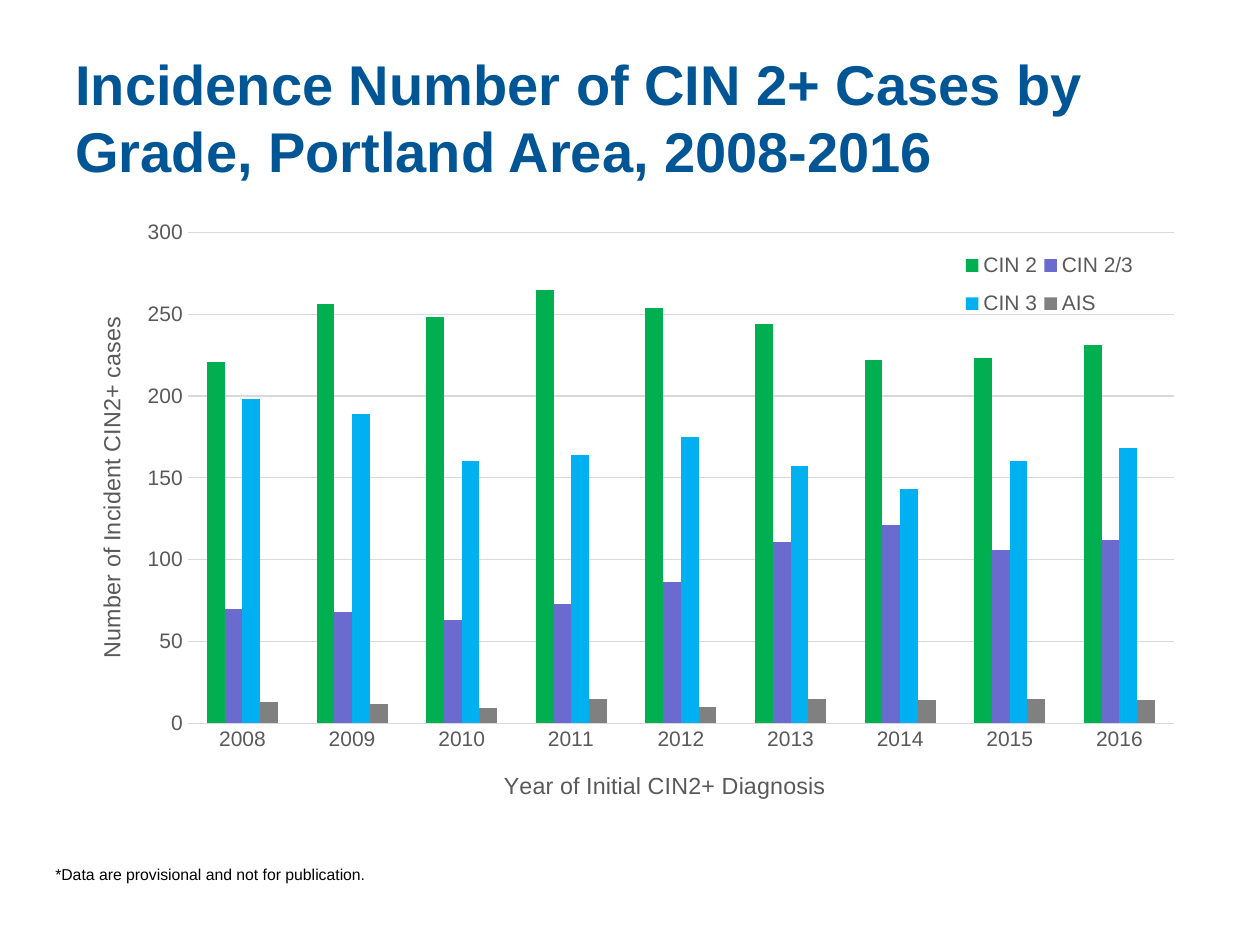
from lxml.etree import SubElement, Element
from pptx import Presentation
from pptx.chart.data import CategoryChartData
from pptx.dml.color import RGBColor
from pptx.enum.chart import XL_CHART_TYPE as ChartType, XL_LEGEND_POSITION as LegendPos
from pptx.enum.chart import XL_TICK_MARK as Tick
from pptx.enum.text import MSO_ANCHOR as Anchor
from pptx.oxml.ns import qn
from pptx.util import Pt

BLUE = RGBColor(0x00, 0x55, 0x95)
BLACK = RGBColor(0x00, 0x00, 0x00)
GRAY = RGBColor(0x59, 0x59, 0x59)
GRID = RGBColor(0xD9, 0xD9, 0xD9)
YEARS = [str(year) for year in range(2008, 2017)]
GRADES = {
    "CIN 2": (RGBColor(0x00, 0xB0, 0x50), [221, 256, 248, 265, 254, 244, 222, 223, 231]),
    "CIN 2/3": (RGBColor(0x6B, 0x6B, 0xCF), [70, 68, 63, 73, 86, 111, 121, 106, 112]),
    "CIN 3": (RGBColor(0x00, 0xB0, 0xF0), [198, 189, 160, 164, 175, 157, 143, 160, 168]),
    "AIS": (RGBColor(0x80, 0x80, 0x80), [13, 12, 9, 15, 10, 15, 14, 15, 14]),
}


def set_font(font, size, color, bold=False):
    """Apply the slide typeface with a size, colour and weight."""
    values = {"name": "Arial", "size": Pt(size), "bold": bold}
    for name, value in values.items():
        setattr(font, name, value)
    font.color.rgb = color


def set_layout(parent, index, **values):
    """Place a chart part by fractions of the chart area."""
    for old in parent.findall(qn("c:layout")):
        parent.remove(old)
    layout = Element(qn("c:layout"))
    manual = SubElement(layout, qn("c:manualLayout"))
    if parent.tag == qn("c:plotArea"):
        SubElement(manual, qn("c:layoutTarget"), val="inner")
    for name in ("xMode", "yMode"):
        SubElement(manual, qn(f"c:{name}"), val="edge")
    for name, value in values.items():
        SubElement(manual, qn(f"c:{name}"), val=str(value))
    parent.insert(index, layout)


def add_text(s, box, text, size, color, bold=False, anchor=Anchor.TOP):
    """Add one wrapped paragraph in the given box."""
    tf = s.shapes.add_textbox(*map(Pt, box)).text_frame
    tf.word_wrap = True
    tf.vertical_anchor = anchor
    r = tf.paragraphs[0].add_run()
    r.text = text
    set_font(r.font, size, color, bold)


def format_axis(axis, title, x, y):
    """Style an axis and place its title."""
    axis.major_tick_mark = axis.minor_tick_mark = Tick.NONE
    set_font(axis.tick_labels.font, 12, GRAY)
    r = axis.axis_title.text_frame.paragraphs[0].add_run()
    r.text = title
    set_font(r.font, 13.3, GRAY)
    set_layout(axis.axis_title._element, 1, x=x, y=y)


def add_cases_chart(s, box):
    """Add the clustered columns of cases by grade and year."""
    data = CategoryChartData()
    data.categories = YEARS
    for name, (_, cases) in GRADES.items():
        data.add_series(name, cases)
    chart = s.shapes.add_chart(ChartType.COLUMN_CLUSTERED, *map(Pt, box), data).chart
    set_font(chart.font, 10, BLACK)
    chart.has_title = False
    plot = chart.plots[0]
    plot.gap_width, plot.overlap, plot.vary_by_categories = 219, 0, False
    for series, (color, _) in zip(plot.series, GRADES.values()):
        series.format.fill.solid()
        series.format.fill.fore_color.rgb = color

    years, counts = chart.category_axis, chart.value_axis
    format_axis(years, "Year of Initial CIN2+ Diagnosis", 0.385, 0.91)
    format_axis(counts, "Number of Incident CIN2+ cases", 0.026, 0.17)
    counts.minimum_scale, counts.maximum_scale, counts.major_unit = 0, 300, 50
    counts.has_major_gridlines = True
    counts.format.line.fill.background()
    for line in (years.format.line, counts.major_gridlines.format.line):
        line.color.rgb = GRID
        line.width = Pt(0.75)

    chart.has_legend = True
    legend = chart.legend
    legend.position = LegendPos.CORNER
    legend.include_in_layout = True
    set_font(legend.font, 12, GRAY)
    set_layout(legend._element, 1, x=0.79, y=0.05, w=0.16, h=0.15)
    plot_area = chart._chartSpace.chart.plotArea
    set_layout(plot_area, 0, x=0.11, y=0.04, w=0.87, h=0.8)


def main():
    """Build and save the slide."""
    prs = Presentation()
    prs.slide_width, prs.slide_height = Pt(720), Pt(540)
    s = prs.slides.add_slide(prs.slide_layouts[6])
    title = "Incidence Number of CIN 2+ Cases by Grade, Portland Area, 2008-2016"
    add_text(s, (36, 21.6, 648, 90), title, 32, BLUE, True, Anchor.MIDDLE)
    add_cases_chart(s, (36, 118.8, 648, 350.64))
    note = "*Data are provisional and not for publication."
    add_text(s, (24.48, 490.32, 473.76, 18), note, 9, BLACK)
    prs.save("out.pptx")


if __name__ == "__main__":
    main()
